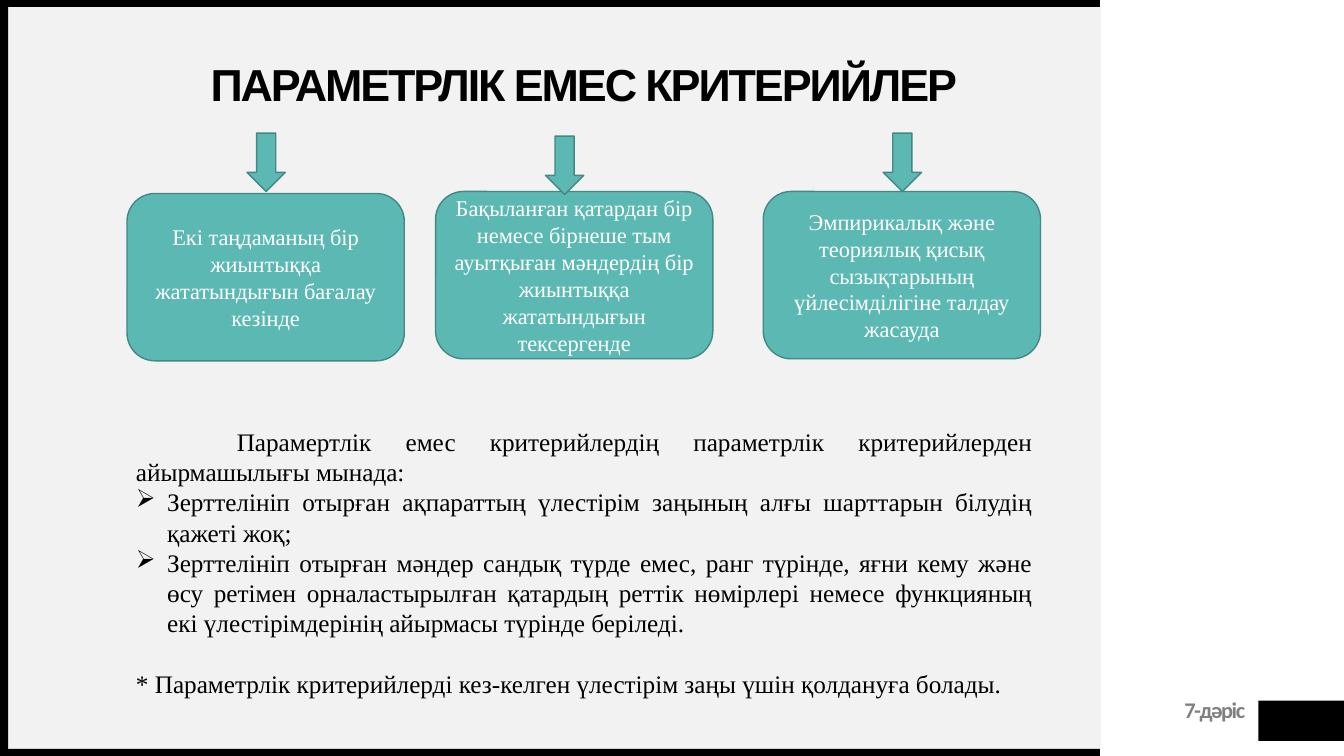
from dataclasses import dataclass

from lxml.etree import SubElement
from pptx import Presentation
from pptx.dml.color import RGBColor
from pptx.enum.shapes import MSO_SHAPE as Preset
from pptx.enum.text import MSO_ANCHOR as Anchor, PP_ALIGN as Align
from pptx.oxml.ns import qn
from pptx.shapes.autoshape import Shape
from pptx.slide import Slide
from pptx.text.text import TextFrame, _Paragraph as Paragraph
from pptx.util import Inches, Pt

BLACK = "000000"
WHITE = "FFFFFF"
PANEL_GREY = "F2F2F2"
FOOTER_GREY = "808080"
TEAL = "5CB8B3"
DARK_TEAL = "448884"
SERIF = "Times New Roman"


@dataclass(frozen=True)
class Band:
    left: float
    top: float
    width: float
    height: float
    fill: str = BLACK


@dataclass(frozen=True)
class Criterion:
    left: float
    top: float
    arrow_left: float
    arrow_top: float
    text: str


@dataclass(frozen=True)
class Passage:
    text: str
    first_indent: float = 0
    bullet: str = ""
    space_before: float = 0


BANDS = [
    Band(0.08, 0.07, 10.84, 7.36, PANEL_GREY),
    Band(12.48, 6.95, 0.86, 0.4),
    Band(0, 7.43, 10.91, 0.07),
    Band(0, 0, 10.91, 0.07),
    Band(0, 0.03, 0.08, 7.47),
]

CRITERIA = [
    Criterion(1.26, 1.92, 2.45, 1.32,
              "Екі таңдаманың бір жиынтыққа жататындығын бағалау кезінде"),
    Criterion(4.32, 1.9, 5.41, 1.35,
              "Бақыланған қатардан бір немесе бірнеше тым ауытқыған мәндердің "
              "бір жиынтыққа жататындығын тексергенде"),
    Criterion(7.57, 1.9, 8.76, 1.32,
              "Эмпирикалық және теориялық қисық сызықтарының үйлесімділігіне "
              "талдау жасауда"),
]

PASSAGES = [
    Passage("Парамертлік емес критерийлердің параметрлік критерийлерден "
            "айырмашылығы мынада:", first_indent=1),
    Passage("Зерттелініп отырған ақпараттың үлестірім заңының алғы шарттарын "
            "білудің қажеті жоқ;", bullet="➢"),
    Passage("Зерттелініп отырған мәндер сандық түрде емес, ранг түрінде, яғни "
            "кему және өсу ретімен орналастырылған қатардың реттік нөмірлері "
            "немесе функцияның екі үлестірімдерінің айырмасы түрінде беріледі.",
            bullet="➢"),
    Passage("* Параметрлік критерийлерді кез-келген үлестірім заңы үшін "
            "қолдануға болады.", space_before=21.6),
]


def rgb(value: str) -> RGBColor:
    return RGBColor.from_string(value)


def style(paragraph: Paragraph, size: float, font: str, color: str,
          align: Align, bold: bool = False, spacing: float = 0) -> None:
    paragraph.alignment = align
    for run in paragraph.runs:
        run.font.size = Pt(size)
        run.font.name = font
        run.font.bold = bold
        run.font.color.rgb = rgb(color)
        if spacing:
            run.font._element.set("spc", str(round(spacing * 100)))


def clear_margins(frame: TextFrame, top: float = 0) -> None:
    frame.margin_left = frame.margin_right = frame.margin_bottom = 0
    frame.margin_top = Inches(top)


def add_block(slide: Slide, preset: Preset, left: float, top: float,
              width: float, height: float, fill: str, line: str = "") -> Shape:
    block = slide.shapes.add_shape(preset, Inches(left), Inches(top),
                                   Inches(width), Inches(height))
    block.shadow.inherit = False
    block.fill.solid()
    block.fill.fore_color.rgb = rgb(fill)
    if line:
        block.line.color.rgb = rgb(line)
        block.line.width = Pt(1)
    else:
        block.line.fill.background()
    return block


def add_text_area(slide: Slide, left: float, top: float,
                  width: float, height: float) -> TextFrame:
    frame = slide.shapes.add_textbox(Inches(left), Inches(top), Inches(width),
                                     Inches(height)).text_frame
    frame.word_wrap = True
    return frame


def add_lecture_label(slide: Slide) -> None:
    frame = add_text_area(slide, 10.53, 6.94, 1.82, 0.24)
    clear_margins(frame, top=0.04)
    frame.text = "7-дәріс"
    label = frame.paragraphs[0]
    label.line_spacing = Pt(14)
    style(label, 16, "Calibri", FOOTER_GREY, Align.RIGHT, True, -1)


def place_title(slide: Slide) -> None:
    title = slide.shapes.title
    slide.shapes._spTree.append(title._element)
    title.left, title.top = Inches(1.04), Inches(0.4)
    title.width, title.height = Inches(9.5), Inches(0.92)
    frame = title.text_frame
    clear_margins(frame)
    frame.vertical_anchor = Anchor.MIDDLE
    frame.text = "ПАРАМЕТРЛІК ЕМЕС КРИТЕРИЙЛЕР"
    heading = frame.paragraphs[0]
    heading.line_spacing = 0.9
    style(heading, 32, "Arial", BLACK, Align.CENTER, True, -1.5)


def add_criterion(slide: Slide, criterion: Criterion) -> None:
    box = add_block(slide, Preset.ROUNDED_RECTANGLE, criterion.left,
                    criterion.top, 2.75, 1.66, TEAL, DARK_TEAL)
    frame = box.text_frame
    frame.word_wrap = True
    frame.vertical_anchor = Anchor.MIDDLE
    frame.text = criterion.text
    style(frame.paragraphs[0], 16, SERIF, WHITE, Align.CENTER)
    add_block(slide, Preset.DOWN_ARROW, criterion.arrow_left,
              criterion.arrow_top, 0.38, 0.58, TEAL, DARK_TEAL)


def add_explanation(slide: Slide) -> None:
    frame = add_text_area(slide, 1.25, 4.18, 9.09, 2.83)
    for index, passage in enumerate(PASSAGES):
        paragraph = frame.add_paragraph() if index else frame.paragraphs[0]
        paragraph.text = passage.text
        paragraph.space_before = Pt(passage.space_before)
        style(paragraph, 18, SERIF, BLACK, Align.JUSTIFY)
        properties = paragraph._p.get_or_add_pPr()
        if passage.first_indent:
            properties.set("indent", str(Inches(passage.first_indent)))
        if passage.bullet:
            properties.set("marL", str(Inches(0.31)))
            properties.set("indent", str(Inches(-0.31)))
            SubElement(properties, qn("a:buChar")).set("char", passage.bullet)


def main() -> None:
    deck = Presentation()
    deck.slide_width, deck.slide_height = Inches(13.33), Inches(7.5)
    slide = deck.slides.add_slide(deck.slide_layouts.get_by_name("Title Only"))
    for band in BANDS:
        add_block(slide, Preset.RECTANGLE, band.left, band.top, band.width,
                  band.height, band.fill)
    add_lecture_label(slide)
    place_title(slide)
    for criterion in CRITERIA:
        add_criterion(slide, criterion)
    add_explanation(slide)
    deck.save("out.pptx")


if __name__ == "__main__":
    main()
